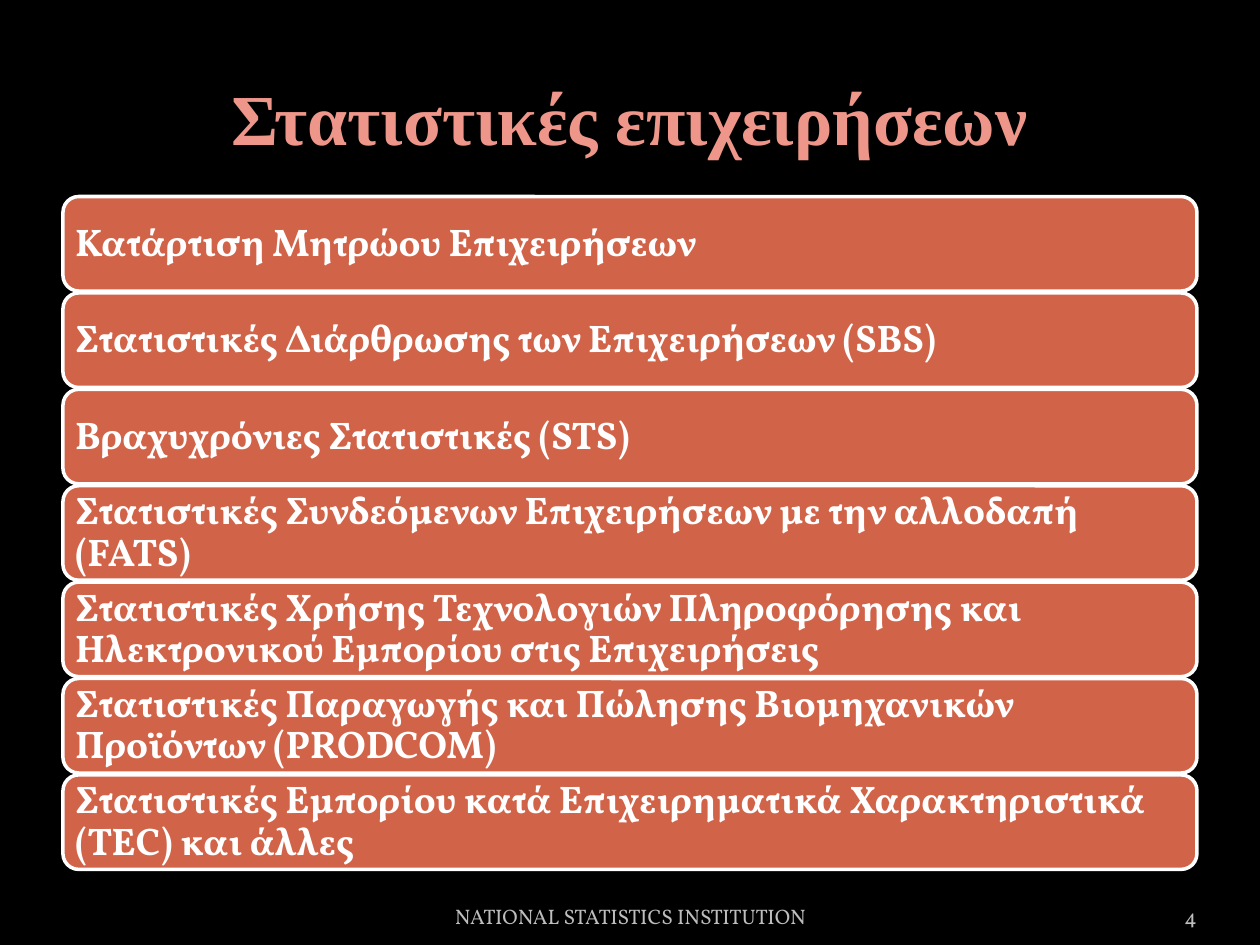
from pptx import Presentation
from pptx.dml.color import RGBColor
from pptx.enum.shapes import MSO_SHAPE
from pptx.enum.text import MSO_ANCHOR, PP_ALIGN
from pptx.util import Inches, Pt

ROUNDED = MSO_SHAPE.ROUNDED_RECTANGLE
MIDDLE, BOTTOM = MSO_ANCHOR.MIDDLE, MSO_ANCHOR.BOTTOM
LEFT, CENTER, RIGHT = PP_ALIGN.LEFT, PP_ALIGN.CENTER, PP_ALIGN.RIGHT

COLORS = {
    "background": "000000",
    "title": "EE968A",
    "bar": "D16349",
    "white": "FFFFFF",
    "footer": "BDBDBD",
}
TITLE_FONT = "Times New Roman"
BODY_FONT = "Vollkorn"

TOPICS = [
    "Κατάρτιση Μητρώου Επιχειρήσεων",
    "Στατιστικές Διάρθρωσης των Επιχειρήσεων (SBS)",
    "Βραχυχρόνιες Στατιστικές (STS)",
    "Στατιστικές Συνδεόμενων Επιχειρήσεων με την αλλοδαπή (FATS)",
    "Στατιστικές Χρήσης Τεχνολογιών Πληροφόρησης και "
    "Ηλεκτρονικού Εμπορίου στις Επιχειρήσεις",
    "Στατιστικές Παραγωγής και Πώλησης Βιομηχανικών Προϊόντων (PRODCOM)",
    "Στατιστικές Εμπορίου κατά Επιχειρηματικά Χαρακτηριστικά (TEC) και άλλες",
]
BAR_TOP, BAR_HEIGHT, BAR_STEP = 1.56, 0.75, 0.765


def rgb(name):
    return RGBColor.from_string(COLORS[name])


def write(shape, text, size, color, align, anchor, inset, font=BODY_FONT, bold=False):
    """Fill a shape with one formatted paragraph and return the paragraph."""
    frame = shape.text_frame
    frame.word_wrap = True
    frame.vertical_anchor = anchor
    frame.margin_left = frame.margin_right = Inches(inset)
    frame.margin_top = frame.margin_bottom = Inches(0.05)
    paragraph = frame.paragraphs[0]
    paragraph.text = text
    paragraph.alignment = align
    paragraph.font.name = font
    paragraph.font.size = Pt(size)
    paragraph.font.bold = bold
    paragraph.font.color.rgb = rgb(color)
    return paragraph


def add_label(slide, box, *args, **kwargs):
    label = slide.shapes.add_textbox(*map(Inches, box))
    write(label, *args, **kwargs)


def add_bar(slide, top, topic):
    bar = slide.shapes.add_shape(
        ROUNDED, Inches(0.5), Inches(top), Inches(9), Inches(BAR_HEIGHT))
    bar.shadow.inherit = False
    bar.fill.solid()
    bar.fill.fore_color.rgb = rgb("bar")
    bar.line.color.rgb = rgb("white")
    bar.line.width = Pt(2)
    # The rounded corners add about 0.04 inch to the inset
    paragraph = write(bar, topic, 22, "white", LEFT, MIDDLE, 0.06, bold=True)
    paragraph.line_spacing = 0.9


def main():
    prs = Presentation()
    prs.slide_width, prs.slide_height = Inches(10), Inches(7.5)
    slide = prs.slides.add_slide(prs.slide_layouts[6])
    slide.background.fill.solid()
    slide.background.fill.fore_color.rgb = rgb("background")

    # Title
    add_label(slide, (0.5, 0.3, 9, 1.25), "Στατιστικές επιχειρήσεων",
              41, "title", CENTER, MIDDLE, 0.1, font=TITLE_FONT, bold=True)

    # Stack of topics
    for row, topic in enumerate(TOPICS):
        add_bar(slide, BAR_TOP + row * BAR_STEP, topic)

    # Footer and slide number
    add_label(slide, (3.42, 7.02, 3.17, 0.4), "NATIONAL STATISTICS INSTITUTION",
              12, "footer", CENTER, BOTTOM, 0.1)
    add_label(slide, (8.67, 7.02, 0.83, 0.4), "4",
              12, "footer", RIGHT, BOTTOM, 0)

    prs.save("out.pptx")


if __name__ == "__main__":
    main()
